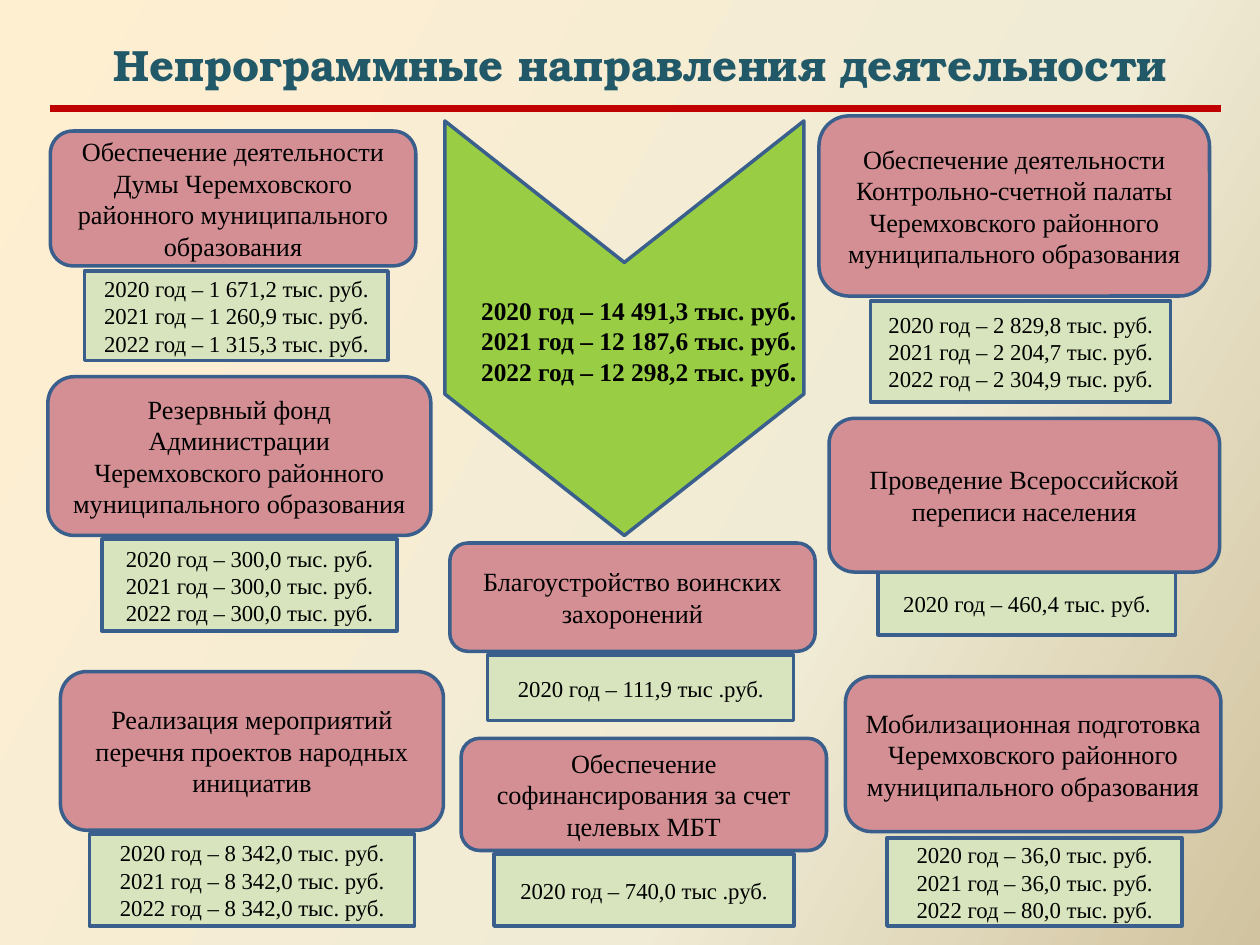
from copy import deepcopy

from lxml import etree
from pptx import Presentation
from pptx.dml.color import RGBColor
from pptx.enum.shapes import MSO_CONNECTOR, MSO_SHAPE
from pptx.enum.text import MSO_ANCHOR, PP_ALIGN
from pptx.oxml.ns import qn
from pptx.util import Inches, Pt

CARD, RECT, CHEVRON = (MSO_SHAPE.FLOWCHART_ALTERNATE_PROCESS,
                       MSO_SHAPE.RECTANGLE, MSO_SHAPE.CHEVRON)
TOP, MIDDLE = MSO_ANCHOR.TOP, MSO_ANCHOR.MIDDLE
LEFT, CENTER = PP_ALIGN.LEFT, PP_ALIGN.CENTER

# Content
TITLE = "Непрограммные направления деятельности"
TOTALS = ["14 491,3", "12 187,6", "12 298,2"]
FIRST_YEAR = 2020
UNIT, UNIT_ALT = "тыс. руб.", "тыс .руб."

# name, amounts, unit, card (left, top, width, height),
# amount box (left, width, height), gap between the two
DIRECTIONS = [
    ("Обеспечение деятельности Думы Черемховского районного муниципального образования",
     ["1 671,2", "1 260,9", "1 315,3"], UNIT,
     (0.4, 1.04, 2.9, 1.07), (0.67, 2.41, 0.71), 0.04),
    ("Резервный фонд Администрации Черемховского районного муниципального образования",
     ["300,0", "300,0", "300,0"], UNIT,
     (0.38, 2.99, 3.04, 1.26), (0.81, 2.34, 0.73), 0.03),
    ("Реализация мероприятий перечня проектов народных инициатив",
     ["8 342,0", "8 342,0", "8 342,0"], UNIT,
     (0.48, 5.33, 3.04, 1.26), (0.71, 2.58, 0.73), 0.03),
    ("Благоустройство воинских захоронений",
     ["111,9"], UNIT_ALT,
     (3.57, 4.31, 2.9, 0.86), (3.87, 2.43, 0.52), 0.03),
    ("Обеспечение софинансирования за счет целевых МБТ",
     ["740,0"], UNIT_ALT,
     (3.66, 5.86, 2.9, 0.89), (3.92, 2.38, 0.57), 0.03),
    ("Обеспечение деятельности Контрольно-счетной палаты Черемховского районного "
     "муниципального образования",
     ["2 829,8", "2 204,7", "2 304,9"], UNIT,
     (6.5, 0.92, 3.1, 1.43), (6.91, 2.38, 0.8), 0.04),
    ("Проведение Всероссийской переписи населения",
     ["460,4"], UNIT,
     (6.58, 3.32, 3.1, 1.22), (6.97, 2.36, 0.5), 0),
    ("Мобилизационная подготовка Черемховского районного муниципального образования",
     ["36,0", "36,0", "80,0"], UNIT,
     (6.71, 5.37, 2.98, 1.23), (7.04, 2.34, 0.7), 0.05),
]

COLORS = {"card": "D38F94", "amount": "D7E4BD", "arrow": "99CE44",
          "outline": "3A5F8C", "rule": "C00000", "title": "215968", "text": "000000"}
BACKGROUND = [(0, "FFEFD1"), (65, "F0EBD5"), (100, "D1C39F")]
BODY_FONT, TITLE_FONT = "Times New Roman", "TeX Gyre Bonum"


def rgb(name):
    return RGBColor.from_string(COLORS[name])


def year_lines(amounts, unit):
    return [f"{year} год – {amount} {unit}"
            for year, amount in enumerate(amounts, FIRST_YEAR)]


def write(sp, lines, size, font=BODY_FONT, color="text", bold=False,
          align=CENTER, anchor=MIDDLE):
    tf = sp.text_frame
    tf.word_wrap = True
    tf.vertical_anchor = anchor
    for i, line in enumerate(lines):
        p = tf.paragraphs[0] if i == 0 else tf.add_paragraph()
        p.alignment = align
        r = p.add_run()
        r.text = line
        r.font.name, r.font.size, r.font.bold = font, Pt(size), bold
        r.font.color.rgb = rgb(color)


def add_block(s, kind, box, fill):
    sp = s.shapes.add_shape(kind, *map(Inches, box))
    sp.shadow.inherit = False
    sp.fill.solid()
    sp.fill.fore_color.rgb = rgb(fill)
    sp.line.color.rgb = rgb("outline")
    sp.line.width = Pt(2)
    return sp


def set_background(s):
    fill = s.background.fill
    fill.gradient()
    fill.gradient_angle = 330
    stops = s.element.find(".//" + qn("a:gsLst"))
    stops.append(deepcopy(stops[-1]))
    for stop, (share, color) in zip(fill.gradient_stops, BACKGROUND):
        stop.position = share / 100
        stop.color.rgb = RGBColor.from_string(color)


def main():
    prs = Presentation()
    prs.slide_width, prs.slide_height = Inches(10), Inches(7.5)
    s = prs.slides.add_slide(prs.slide_layouts[6])
    set_background(s)

    # Title and the rule below it
    title = s.shapes.add_textbox(*map(Inches, (0.48, 0.2, 9.21, 1.03)))
    title.text_frame.margin_top = Inches(0.1)
    write(title, [TITLE], 25, font=TITLE_FONT, color="title", bold=True, anchor=TOP)
    rule = s.shapes.add_connector(MSO_CONNECTOR.STRAIGHT,
                                  *map(Inches, (0.4, 0.86, 9.69, 0.86)))
    rule.line.color.rgb = rgb("rule")
    rule.line.width = Pt(3.75)
    etree.SubElement(rule._element.spPr, qn("a:effectLst"))

    # Arrow with the totals
    arrow = add_block(s, CHEVRON, (3.31, 1.18, 3.29, 2.85), "arrow")
    arrow.rotation = 90
    arrow.adjustments[0] = 0.394
    totals = s.shapes.add_textbox(*map(Inches, (3.72, 2.29, 2.73, 0.83)))
    totals.text_frame.margin_right = 0
    write(totals, year_lines(TOTALS, UNIT), 14.5, bold=True, align=LEFT, anchor=TOP)

    # Cards, each with its amounts underneath
    for name, amounts, unit, card, (left, width, height), gap in DIRECTIONS:
        top = card[1] + card[3] + gap
        sp = add_block(s, RECT, (left, top, width, height), "amount")
        write(sp, year_lines(amounts, unit), 13)
        write(add_block(s, CARD, card, "card"), [name], 15)

    prs.save("out.pptx")


if __name__ == "__main__":
    main()
